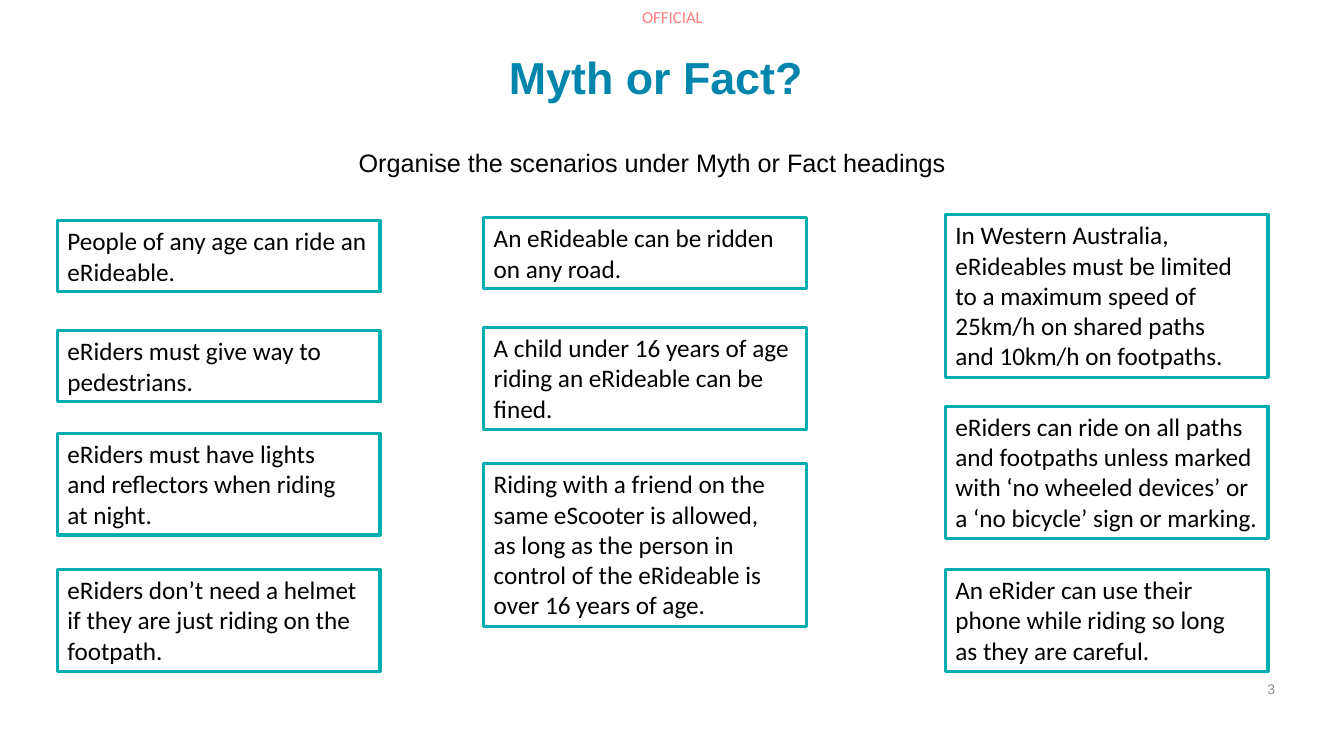
"""Build the "Myth or Fact?" sorting slide."""
from lxml.etree import SubElement
from pptx import Presentation
from pptx.dml.color import RGBColor
from pptx.enum.text import MSO_ANCHOR as Anchor, MSO_AUTO_SIZE as AutoSize, PP_ALIGN as Align
from pptx.oxml.ns import qn
from pptx.util import Inches, Pt

COLOURS = {"title": "0085AC", "border": "00ADB1", "text": "000000",
           "marking": "FF0000", "number": "8C8C8C"}
WIDTH, HEIGHT = Inches(13.333), Inches(7.5)
CARD_WIDTH, CARD_PADDING, LINE_HEIGHT = 24, 1.33, 4.04
CARD_COLUMNS = {
    4.28: [
        (29.2, 2, ["People of any age can ride an eRideable."]),
        (43.73, 2, ["eRiders must give way to pedestrians."]),
        (57.33, 3, ["eRiders must have lights", "and reflectors when riding", "at night."]),
        (75.33, 3, ["eRiders don’t need a helmet if they are just riding on the footpath."]),
    ],
    36: [
        (28.8, 2, ["An eRideable can be ridden on any road."]),
        (43.33, 3, ["A child under 16 years of age riding an eRideable can be fined."]),
        (61.33, 5, ["Riding with a friend on the same eScooter is allowed,",
                    "as long as the person in control of the eRideable is over 16 years of age."]),
    ],
    70.35: [
        (28.4, 5, ["In Western Australia, eRideables must be limited to a maximum speed of "
                   "25km/h on shared paths", "and 10km/h on footpaths."]),
        (53.73, 4, ["eRiders can ride on all paths and footpaths unless marked with "
                    "‘no wheeled devices’ or a ‘no bicycle’ sign or marking."]),
        (75.33, 3, ["An eRider can use their phone while riding so long", "as they are careful."]),
    ],
}


def set_attributes(target, values):
    """Set each named value on the target."""
    for name, value in values.items():
        setattr(target, name, value)


def colour(name):
    """Return the named colour."""
    return RGBColor.from_string(COLOURS[name])


def add_text(page, share, lines, font, colour_name="text", align=Align.LEFT, **frame_values):
    """Add a text box placed in percent of the slide, one paragraph per line."""
    left, top, width, height = share
    box = page.shapes.add_textbox(int(WIDTH * left / 100), int(HEIGHT * top / 100),
                                  int(WIDTH * width / 100), int(HEIGHT * height / 100))
    frame = box.text_frame
    set_attributes(frame, {"word_wrap": True, **frame_values})
    for index, line in enumerate(lines):
        para = frame.paragraphs[0] if index == 0 else frame.add_paragraph()
        para.alignment = align
        span = para.add_run()
        span.text = line
        set_attributes(span.font, font)
        span.font.color.rgb = colour(colour_name)
    return box


def add_card(page, left, top, line_count, lines):
    """Add one outlined scenario card."""
    height = CARD_PADDING + LINE_HEIGHT * line_count
    box = add_text(page, (left, top, CARD_WIDTH, height), lines,
                   {"name": "Calibri", "size": Pt(18)},
                   auto_size=AutoSize.SHAPE_TO_FIT_TEXT)
    box.line.color.rgb = colour("border")
    box.line.width = Pt(2.25)


def add_marking(page, bare):
    """Add the half-transparent classification marking."""
    box = add_text(page, (47.78, 0.93, 4.8, 2.67), ["OFFICIAL"],
                   {"name": "Calibri", "size": Pt(12)}, "marking",
                   **{**bare, "word_wrap": False})
    for fill in box.text_frame._txBody.iter(qn("a:srgbClr")):
        SubElement(fill, qn("a:alpha"), val="50000")


def main():
    """Build and save the deck."""
    deck = Presentation()
    set_attributes(deck, {"slide_width": WIDTH, "slide_height": HEIGHT})
    page = deck.slides.add_slide(deck.slide_layouts[6])
    bare = dict.fromkeys(("margin_left", "margin_top", "margin_right", "margin_bottom"), 0)
    add_marking(page, bare)
    add_text(page, (37.13, 5.87, 25.73, 15.73), ["Myth or Fact?"],
             {"name": "Arial", "size": Pt(32), "bold": True}, "title")
    add_text(page, (25.95, 18.8, 50.03, 5.33),
             ["Organise the scenarios under Myth or Fact headings"],
             {"name": "Arial", "size": Pt(18)})
    for left, cards in CARD_COLUMNS.items():
        for card in cards:
            add_card(page, left, *card)
    add_text(page, (72.45, 88.8, 22.43, 4.67), ["3"], {"name": "Arial", "size": Pt(10)},
             "number", Align.RIGHT, vertical_anchor=Anchor.MIDDLE, **bare)
    deck.save("out.pptx")


if __name__ == "__main__":
    main()
